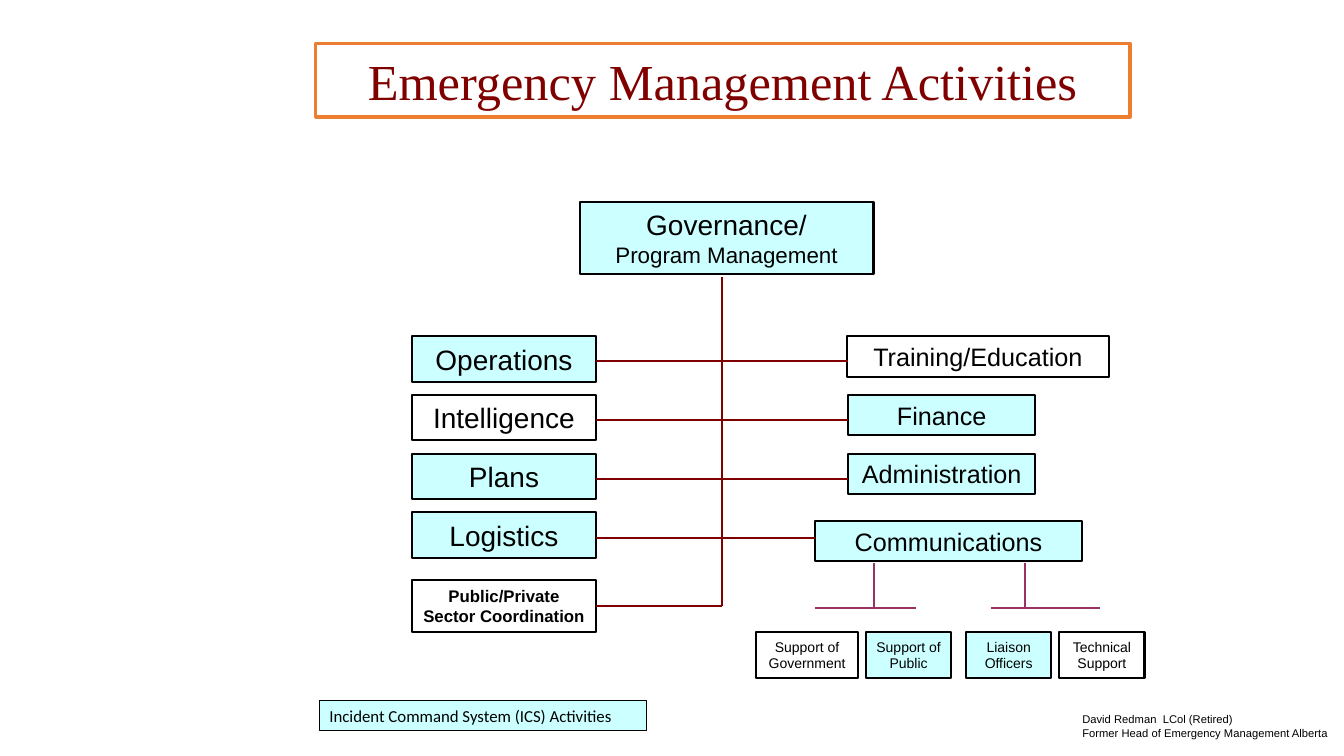
import pptx
import pptx.util
import pptx.dml.color
import pptx.enum.shapes
import pptx.enum.text
import pptx.oxml.ns
import lxml.etree
from dataclasses import dataclass

Pt = pptx.util.Pt
Align = pptx.enum.text.PP_ALIGN


@dataclass(frozen=True)
class Theme:
    ink: str = "000000"
    ics: str = "CCFFFF"
    plain: str = "FFFFFF"
    trunk: str = "800000"
    twig: str = "993366"
    frame: str = "ED7D31"
    sans: str = "Arial"
    serif: str = "Times New Roman"
    label: str = "Calibri"
    head: int = 36
    big: int = 20
    mid: int = 18
    sub: int = 16
    note: int = 12
    small: int = 10
    tiny: int = 8


T = Theme()


def rgb(code):
    return pptx.dml.color.RGBColor.from_string(code)


def write(shape, text, sizes, font=T.sans, color=T.ink, bold=False,
          align=Align.CENTER):
    """Set the text; sizes go to the runs in turn, the last one repeats."""
    frame = shape.text_frame
    frame.text = text
    frame.word_wrap = True
    frame.auto_size = pptx.enum.text.MSO_AUTO_SIZE.NONE
    frame.vertical_anchor = pptx.enum.text.MSO_ANCHOR.MIDDLE
    runs = []
    for para in frame.paragraphs:
        para.alignment = align
        runs += para.runs
    for i, run in enumerate(runs):
        run.font.size = Pt(sizes[min(i, len(sizes) - 1)])
        run.font.name = font
        run.font.bold = bold
        run.font.color.rgb = rgb(color)


def box(slide, text, area, size, ics=True, edge=1.5, **style):
    rect = pptx.enum.shapes.MSO_SHAPE.RECTANGLE
    shape = slide.shapes.add_shape(rect, *map(Pt, area))
    shape.shadow.inherit = False
    shape.fill.solid()
    shape.fill.fore_color.rgb = rgb(T.ics if ics else T.plain)
    shape.line.color.rgb = rgb(T.ink)
    shape.line.width = Pt(edge)
    sizes = size if isinstance(size, tuple) else (size,)
    write(shape, text, sizes, **style)
    return shape


def link(slide, x1, y1, x2, y2, color=T.trunk):
    kind = pptx.enum.shapes.MSO_CONNECTOR.STRAIGHT
    line = slide.shapes.add_connector(kind, Pt(x1), Pt(y1), Pt(x2), Pt(y2))
    line.line.color.rgb = rgb(color)
    line.line.width = Pt(1.5)
    lxml.etree.SubElement(line._element.spPr, pptx.oxml.ns.qn("a:effectLst"))
    return line


def title(slide, text, area):
    shape = slide.shapes.title
    shape.left, shape.top, shape.width, shape.height = map(Pt, area)
    shape.line.color.rgb = rgb(T.frame)
    shape.line.width = Pt(2.25)
    write(shape, text, (T.head,), T.serif, T.trunk)


def main():
    deck = pptx.Presentation()
    deck.slide_width, deck.slide_height = Pt(960), Pt(540)
    slide = deck.slides.add_slide(deck.slide_layouts[5])
    title(slide, "Emergency Management Activities", (225.4, 31, 581.8, 52.6))

    # Head of the chart
    box(slide, "Governance/\vProgram Management", (414, 144, 210, 52),
        (T.big, T.sub))

    # Left branches, one row every 42 points
    left, wide, top, step = 294, 132, 240, 42
    side, trunk = left + wide, 516
    names = [("Operations", True), ("Intelligence", False),
             ("Plans", True), ("Logistics", True)]
    for i, (name, ics) in enumerate(names):
        box(slide, name, (left, top + i * step, wide, 32.6), T.big, ics)
    public = box(slide, "Public/Private Sector Coordination",
                 (left, 414, wide, 37.4), T.note, False, bold=True)

    # Right branches
    for name, x, y, w, ics in [
            ("Training/Education", 604.8, top, 187.4, False),
            ("Finance", 606, top + step, 133.4, True),
            ("Administration", 606, top + 2 * step, 133.4, True),
            ("Communications", 582, 372, 191, True)]:
        box(slide, name, (x, y, w, 29), T.mid, ics)

    # Trunk and cross lines
    foot = 432.7
    link(slide, trunk, 198, trunk, foot)
    for i, end in enumerate((606, 606, 606, 582)):
        y = top + 18 + i * step
        link(slide, side, y, end, y)
    link(slide, side, foot, trunk, foot).begin_connect(public, 3)

    # Communications: two forks over four units
    for stem, x1, x2 in [(624, 582, 654), (732, 708, 785.5)]:
        link(slide, stem, 402.5, stem, 434.5, T.twig)
        link(slide, x1, 434.5, x2, 434.5, T.twig)
    for name, x, w, ics in [("Support of Government", 540, 73, False),
                            ("Support of Public", 618.4, 61.2, True),
                            ("Liaison Officers", 690.2, 60.6, True),
                            ("Technical Support", 756.6, 61, False)]:
        box(slide, name, (x, 451.5, w, 32.6), T.small, ics)

    # Legend and credit
    box(slide, "Incident Command System (ICS) Activities",
        (228.2, 500.2, 233.8, 21.8), T.note, edge=0.75, font=T.label,
        align=Align.LEFT)
    credit = slide.shapes.add_textbox(Pt(766), Pt(505.4), Pt(194), Pt(26.6))
    write(credit, "David Redman  LCol (Retired)\n"
          "Former Head of Emergency Management Alberta", (T.tiny,),
          align=Align.LEFT)

    deck.save("out.pptx")


if __name__ == "__main__":
    main()
